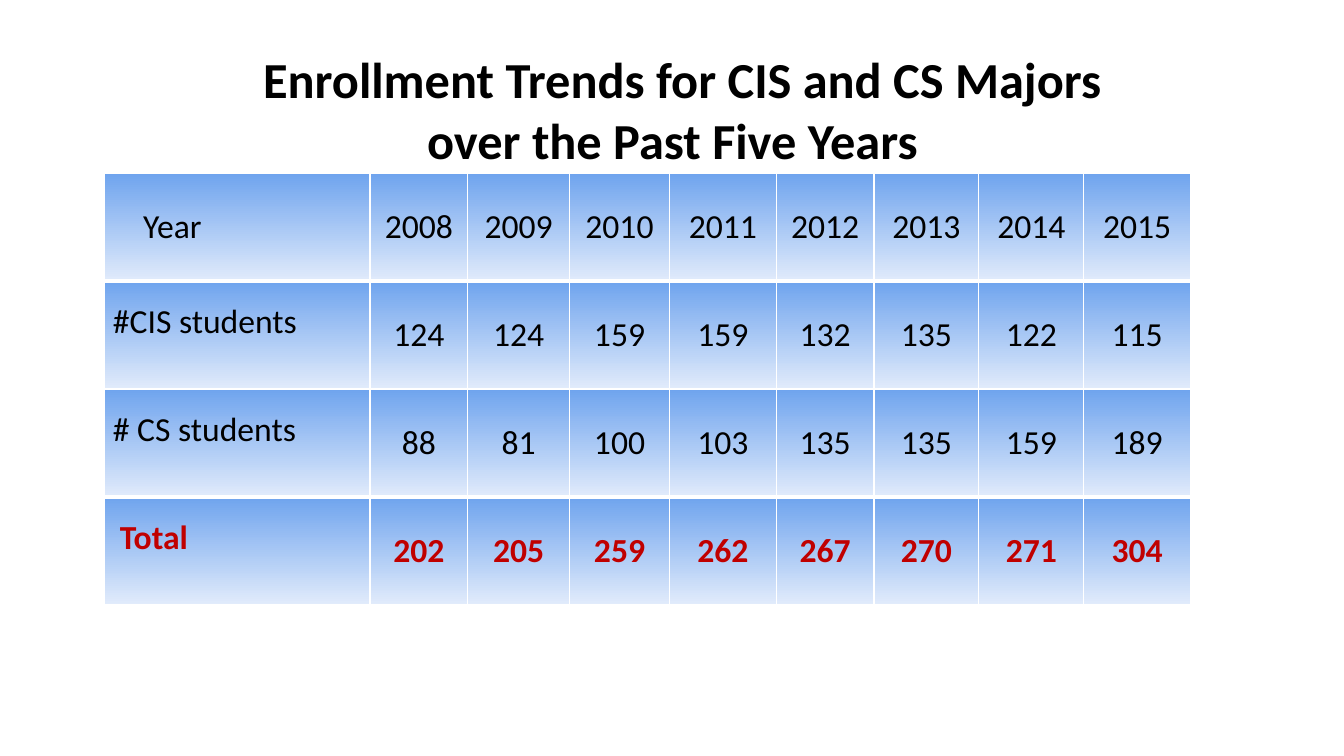
from lxml.etree import SubElement
from pptx import Presentation
from pptx.dml.color import RGBColor
from pptx.enum.text import MSO_ANCHOR, PP_ALIGN
from pptx.oxml.ns import qn
from pptx.util import Inches, Pt

COLORS = {
    "text": "000000",
    "total": "C00000",
    "border": "FFFFFF",
    "cell_top": "6FA4EE",
    "cell_bottom": "E1EBFB",
}
FONT = "Calibri"
ENROLLMENT = [
    ("Year", 2008, 2009, 2010, 2011, 2012, 2013, 2014, 2015),
    ("#CIS students", 124, 124, 159, 159, 132, 135, 122, 115),
    ("# CS students", 88, 81, 100, 103, 135, 135, 159, 189),
    ("Total", 202, 205, 259, 262, 267, 270, 271, 304),
]
LABEL_INDENTS = [0.38, 0.08, 0.08, 0.15]
COLUMN_WIDTHS = [2.63, 0.97, 1.01, 0.99, 1.06, 0.97, 1.04, 1.04, 1.06]
ROW_HEIGHT = 1.07
RULE_WEIGHTS = [1, 3, 1, 3, 1]  # horizontal rules from top to bottom, in points


def style_font(p, size, color, bold):
    p.font.name = FONT
    p.font.size = Pt(size)
    p.font.bold = bold
    p.font.color.rgb = RGBColor.from_string(COLORS[color])


def set_borders(cell, top, bottom):
    """Draw the four cell edges; the vertical ones are always 1 pt."""
    tcPr = cell._tc.get_or_add_tcPr()
    for side, weight in (("L", 1), ("R", 1), ("T", top), ("B", bottom)):
        ln = SubElement(tcPr, qn(f"a:ln{side}"), w=str(Pt(weight)))
        fill = SubElement(ln, qn("a:solidFill"))
        SubElement(fill, qn("a:srgbClr"), val=COLORS["border"])


prs = Presentation()
prs.slide_width = Inches(13.33)
prs.slide_height = Inches(7.5)
s = prs.slides.add_slide(prs.slide_layouts[6])

# Title
title = s.shapes.add_textbox(Inches(0.92), Inches(0.47), Inches(11.5), Inches(1.22))
tf = title.text_frame
tf.word_wrap = True
tf.vertical_anchor = MSO_ANCHOR.MIDDLE
p = tf.paragraphs[0]
p.text = "Enrollment Trends for CIS and CS Majors\vover the Past Five Years"
p.alignment = PP_ALIGN.CENTER
p._p.get_or_add_pPr().set("indent", str(Inches(0.2)))
style_font(p, 36, "text", True)

# Enrollment table
table = s.shapes.add_table(
    len(ENROLLMENT), len(COLUMN_WIDTHS), Inches(1.04), Inches(1.72),
    Inches(sum(COLUMN_WIDTHS)), Inches(ROW_HEIGHT * len(ENROLLMENT)),
).table
for column, width in zip(table.columns, COLUMN_WIDTHS):
    column.width = Inches(width)

for r, values in enumerate(ENROLLMENT):
    table.rows[r].height = Inches(ROW_HEIGHT)
    is_total = r == len(ENROLLMENT) - 1
    for c, value in enumerate(values):
        cell = table.cell(r, c)
        cell.vertical_anchor = MSO_ANCHOR.MIDDLE
        cell.margin_left = Inches(LABEL_INDENTS[r] if c == 0 else 0)
        cell.margin_right = cell.margin_top = cell.margin_bottom = 0
        set_borders(cell, RULE_WEIGHTS[r], RULE_WEIGHTS[r + 1])

        cell.fill.gradient()
        cell.fill.gradient_angle = 270
        for stop, name in zip(cell.fill.gradient_stops, ("cell_top", "cell_bottom")):
            stop.color.rgb = RGBColor.from_string(COLORS[name])

        p = cell.text_frame.paragraphs[0]
        p.text = str(value)
        style_font(p, 24, "total" if is_total else "text", is_total)
        if c > 0:
            p.alignment = PP_ALIGN.CENTER
        elif r > 0:
            p.line_spacing = Pt(11.3)

prs.save("out.pptx")
